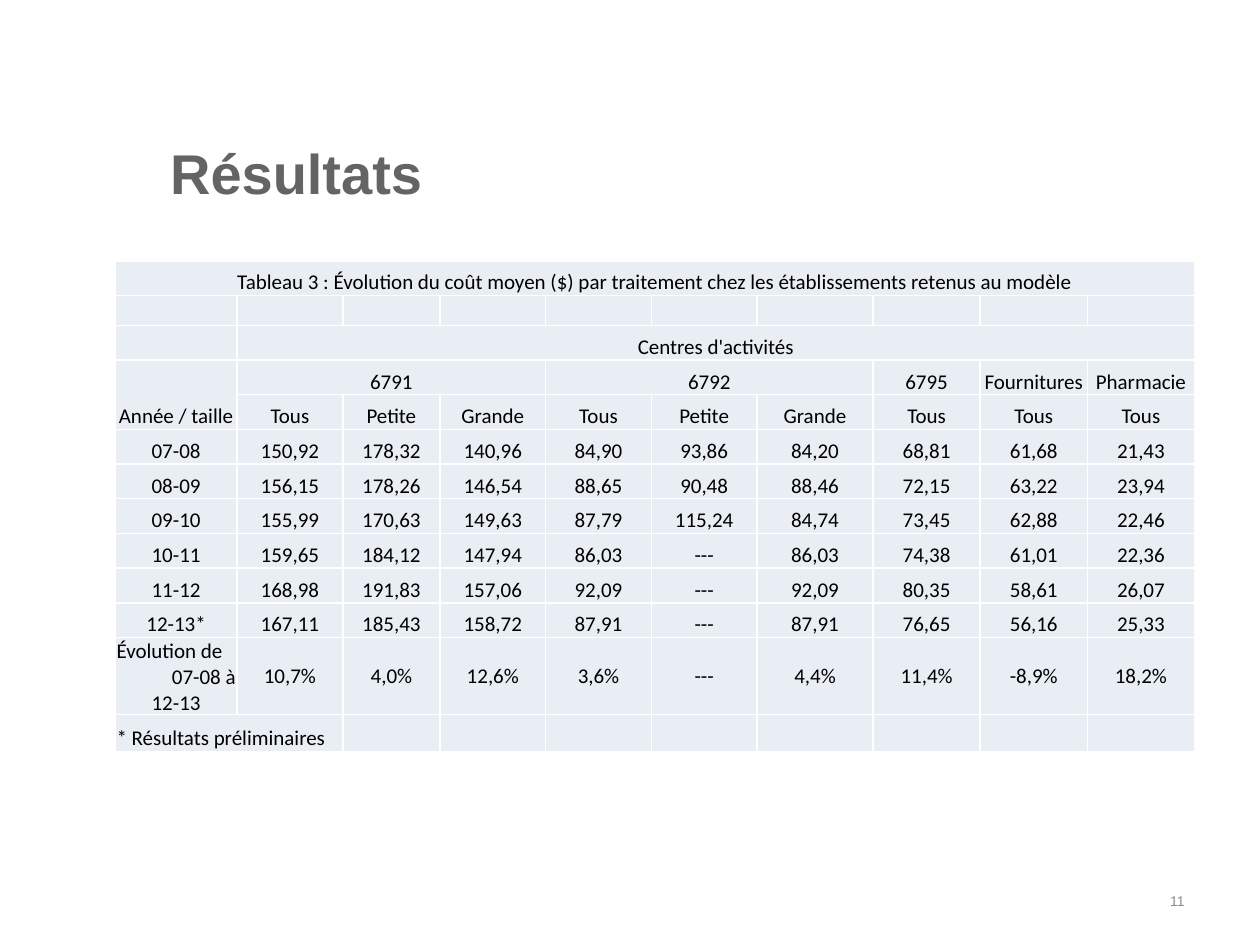
from dataclasses import dataclass

from lxml import etree
from pptx import Presentation
from pptx import util as u
from pptx.dml.color import RGBColor
from pptx.enum import text
from pptx.oxml import ns

LEFT, CENTER, RIGHT = text.PP_ALIGN.LEFT, text.PP_ALIGN.CENTER, text.PP_ALIGN.RIGHT
MIDDLE, BOTTOM = text.MSO_ANCHOR.MIDDLE, text.MSO_ANCHOR.BOTTOM


@dataclass(frozen=True)
class Theme:
    heading_font: str = "Arial"
    table_font: str = "Calibri"
    title_size: int = 32
    table_size: int = 12
    number_size: int = 8
    title_color: str = "646464"
    number_color: str = "8C8C8C"
    table_color: str = "000000"
    cell_fill: str = "E9EDF4"
    border_color: str = "FFFFFF"
    border_width: int = 1


@dataclass(frozen=True)
class Label:
    words: str
    left: float
    top: float
    width: float
    height: float
    size: int
    color: str
    align: text.PP_ALIGN = LEFT
    bold: bool = False
    line_spacing: float = 1.0


@dataclass(frozen=True)
class Span:
    row: int
    column: int
    last_row: int
    last_column: int


THEME = Theme()

LABELS = [
    Label("Résultats", 3.18, 2.51, 20.96, 2.18, THEME.title_size,
          THEME.title_color, bold=True, line_spacing=0.8),
    Label("11", 18.21, 17.65, 5.92, 1.02, THEME.number_size,
          THEME.number_color, align=RIGHT),
]

# Table content, one list per row
SIZES = ["Tous", "Petite", "Grande"]
BLANKS = [""] * 9
ROWS = [
    ["Tableau 3 : Évolution du coût moyen ($) par traitement "
     "chez les établissements retenus au modèle", *BLANKS],
    ["", *BLANKS],
    ["", "Centres d'activités", *BLANKS[1:]],
    ["Année / taille", "6791", "", "", "6792", "", "", "6795", "Fournitures", "Pharmacie"],
    ["", *SIZES, *SIZES, *["Tous"] * 3],
    ["07-08", "150,92", "178,32", "140,96", "84,90", "93,86", "84,20", "68,81", "61,68", "21,43"],
    ["08-09", "156,15", "178,26", "146,54", "88,65", "90,48", "88,46", "72,15", "63,22", "23,94"],
    ["09-10", "155,99", "170,63", "149,63", "87,79", "115,24", "84,74", "73,45", "62,88", "22,46"],
    ["10-11", "159,65", "184,12", "147,94", "86,03", "---", "86,03", "74,38", "61,01", "22,36"],
    ["11-12", "168,98", "191,83", "157,06", "92,09", "---", "92,09", "80,35", "58,61", "26,07"],
    ["12-13*", "167,11", "185,43", "158,72", "87,91", "---", "87,91", "76,65", "56,16", "25,33"],
    ["Évolution de\n07-08 à\n12-13", "10,7%", "4,0%", "12,6%", "3,6%", "---", "4,4%",
     "11,4%", "-8,9%", "18,2%"],
    ["* Résultats préliminaires", *BLANKS],
]
EVOLUTION_ROW, NOTE_ROW = 11, 12
SPANS = [Span(0, 0, 0, 9), Span(2, 1, 2, 9), Span(3, 0, 4, 0),
         Span(3, 1, 3, 3), Span(3, 4, 3, 6), Span(12, 0, 12, 1)]
COLUMN_WIDTHS = [2.46, 2.13, 1.96, 2.13, 2.13, 2.13, 2.34, 2.16, 2.16, 2.16]
ROW_HEIGHTS = [0.7, 0.6, *[0.7] * 9, 1.37, 0.74]


def style_font(font, name: str, size: int, color: str, bold: bool = False) -> None:
    font.name, font.size, font.bold = name, u.Pt(size), bold
    font.color.rgb = RGBColor.from_string(color)


def add_label(page, label: Label) -> None:
    box = page.shapes.add_textbox(u.Cm(label.left), u.Cm(label.top),
                                  u.Cm(label.width), u.Cm(label.height))
    frame = box.text_frame
    frame.word_wrap = True
    frame.vertical_anchor = MIDDLE
    para = frame.paragraphs[0]
    para.text = label.words
    para.alignment = label.align
    para.line_spacing = label.line_spacing
    style_font(para.font, THEME.heading_font, label.size, label.color, label.bold)


def add_borders(cell) -> None:
    properties = cell._tc.get_or_add_tcPr()
    for side in ("a:lnL", "a:lnR", "a:lnT", "a:lnB"):
        line = etree.SubElement(properties, ns.qn(side), w=str(u.Pt(THEME.border_width)))
        fill = etree.SubElement(line, ns.qn("a:solidFill"))
        etree.SubElement(fill, ns.qn("a:srgbClr"), val=THEME.border_color)


def fill_cell(cell, words: str, aligns: list, anchor: text.MSO_ANCHOR) -> None:
    add_borders(cell)
    cell.fill.solid()
    cell.fill.fore_color.rgb = RGBColor.from_string(THEME.cell_fill)
    cell.margin_left = cell.margin_right = cell.margin_top = u.Cm(0.03)
    cell.margin_bottom = 0
    cell.vertical_anchor = anchor
    cell.text_frame.text = words
    for para, align in zip(cell.text_frame.paragraphs, aligns):
        para.alignment = align
        style_font(para.font, THEME.table_font, THEME.table_size, THEME.table_color)
        if not words:  # keeps empty rows from growing
            etree.SubElement(para._p, ns.qn("a:endParaRPr"), sz=str(THEME.table_size * 100))


def add_cost_table(page) -> None:
    frame = page.shapes.add_table(len(ROWS), len(COLUMN_WIDTHS), u.Cm(2.32), u.Cm(5.26),
                                  u.Cm(sum(COLUMN_WIDTHS)), u.Cm(sum(ROW_HEIGHTS)))
    table = frame.table
    table.first_row = table.horz_banding = False
    for column, width in zip(table.columns, COLUMN_WIDTHS):
        column.width = u.Cm(width)
    for row, height in zip(table.rows, ROW_HEIGHTS):
        row.height = u.Cm(height)

    for i, row in enumerate(ROWS):
        for j, words in enumerate(row):
            aligns, anchor = [CENTER], BOTTOM
            if i == EVOLUTION_ROW and j == 0:
                aligns = [LEFT, RIGHT, CENTER]
            elif i == EVOLUTION_ROW:
                anchor = MIDDLE
            elif i == NOTE_ROW:
                aligns = [LEFT]
            fill_cell(table.cell(i, j), words, aligns, anchor)

    for span in SPANS:
        table.cell(span.row, span.column).merge(table.cell(span.last_row, span.last_column))


def main() -> None:
    deck = Presentation()
    deck.slide_width, deck.slide_height = u.Cm(25.4), u.Cm(19.05)
    page = deck.slides.add_slide(deck.slide_layouts[6])

    # Title and page number
    for label in LABELS:
        add_label(page, label)

    # Average cost per treatment
    add_cost_table(page)
    deck.save("out.pptx")


if __name__ == "__main__":
    main()
